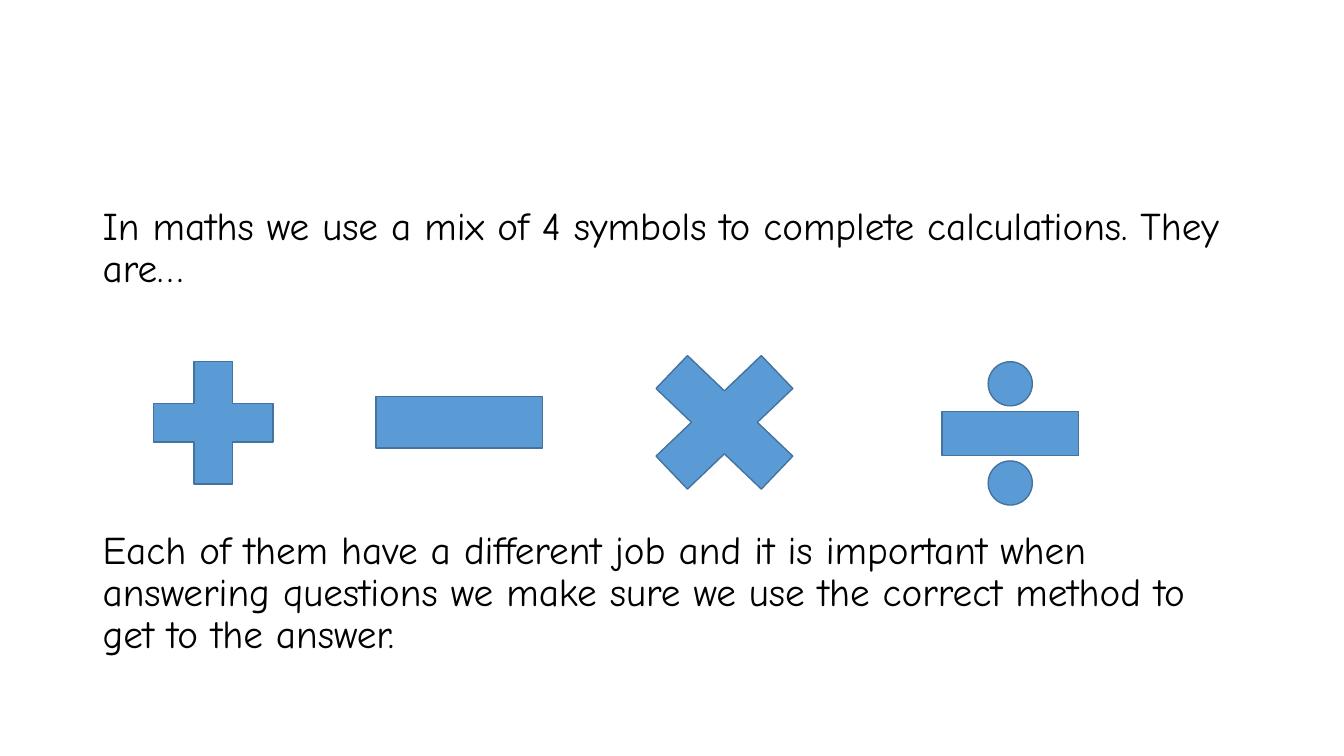
from typing import NamedTuple

from pptx import Presentation
from pptx.dml.color import RGBColor
from pptx.enum.shapes import MSO_SHAPE
from pptx.slide import Slide
from pptx.util import Inches, Pt

PLUS = MSO_SHAPE.MATH_PLUS
MINUS = MSO_SHAPE.MATH_MINUS
MULTIPLY = MSO_SHAPE.MATH_MULTIPLY
DIVIDE = MSO_SHAPE.MATH_DIVIDE

COLOURS = {"text": "000000", "symbol": "5B9BD5", "outline": "43739E"}
FONT = "Comic Neue"
TEXT_LEFT, TEXT_WIDTH = 0.92, 11.5


class Statement(NamedTuple):
    top: float
    height: float
    text: str


class Symbol(NamedTuple):
    kind: MSO_SHAPE
    left: float
    top: float
    width: float
    height: float


STATEMENTS = [
    Statement(2, 1, "In maths we use a mix of 4 symbols to complete calculations. They are…"),
    Statement(5.21, 1.55, "Each of them have a different job and it is important when answering "
              "questions we make sure we use the correct method to get to the answer."),
]
SYMBOLS = [
    Symbol(PLUS, 1.31, 3.37, 1.61, 1.65),
    Symbol(MINUS, 3.43, 3.11, 2.25, 2.16),
    Symbol(MULTIPLY, 6.18, 3.23, 2.01, 1.92),
    Symbol(DIVIDE, 9.1, 3.37, 1.84, 1.86),
]


def colour(name: str) -> RGBColor:
    return RGBColor.from_string(COLOURS[name])


def add_statement(page: Slide, statement: Statement) -> None:
    box = page.shapes.add_textbox(Inches(TEXT_LEFT), Inches(statement.top),
                                  Inches(TEXT_WIDTH), Inches(statement.height))
    box.text_frame.word_wrap = True
    para = box.text_frame.paragraphs[0]
    para.text = statement.text
    para.line_spacing = 0.9
    span = para.runs[0]
    span.font.name = FONT
    span.font.size = Pt(28)
    span.font.color.rgb = colour("text")


def add_symbol(page: Slide, symbol: Symbol) -> None:
    shape = page.shapes.add_shape(symbol.kind, Inches(symbol.left), Inches(symbol.top),
                                  Inches(symbol.width), Inches(symbol.height))
    shape.shadow.inherit = False
    shape.fill.solid()
    shape.fill.fore_color.rgb = colour("symbol")
    shape.line.color.rgb = colour("outline")
    shape.line.width = Pt(1)


def main() -> None:
    deck = Presentation()
    deck.slide_width, deck.slide_height = Inches(13.33), Inches(7.5)
    page = deck.slides.add_slide(deck.slide_layouts[6])
    for statement in STATEMENTS:
        add_statement(page, statement)
    for symbol in SYMBOLS:
        add_symbol(page, symbol)
    deck.save("out.pptx")


if __name__ == "__main__":
    main()
